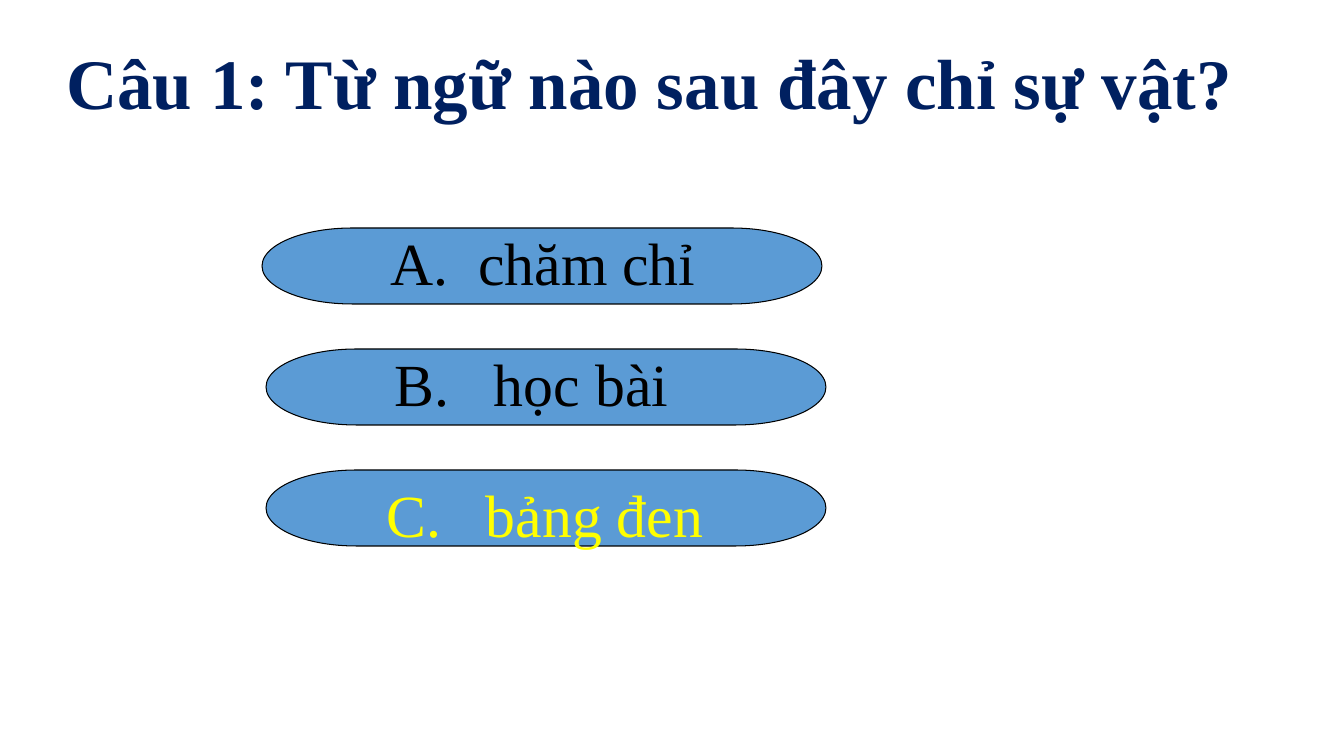
from pptx import Presentation
from pptx.dml.color import RGBColor
from pptx.enum.shapes import MSO_SHAPE
from pptx.enum.text import MSO_ANCHOR, MSO_AUTO_SIZE, PP_ALIGN
from pptx.util import Pt

PILL = MSO_SHAPE.FLOWCHART_TERMINATOR
LEFT, CENTER = PP_ALIGN.LEFT, PP_ALIGN.CENTER
PX = 914400 / 100.8
COLORS = {"navy": "002060", "blue": "5B9BD5", "black": "000000", "yellow": "FFFF00"}

TITLE = "Câu 1: Từ ngữ nào sau đây chỉ sự vật?"
TITLE_BOX = (56, 33, 1243, 96)
# text, colour, pill left, label left, label top, label width
ANSWERS = [
    ("A.  chăm chỉ", "black", 262, 319, 221, 448),
    ("B.   học bài", "black", 266, 296, 342, 471),
    ("C.   bảng đen", "yellow", 266, 319, 473, 452),
]
PILL_TOP, PILL_STEP, PILL_W, PILL_H = 228, 121, 560, 76
LABEL_H = 83


def emu(*lengths):
    return [round(n * PX) for n in lengths]


def rgb(name):
    return RGBColor.from_string(COLORS[name])


def write(shape, text, align, size, color, bold=False):
    frame = shape.text_frame
    for key, value in {"word_wrap": True, "auto_size": MSO_AUTO_SIZE.NONE,
                       "vertical_anchor": MSO_ANCHOR.TOP}.items():
        setattr(frame, key, value)
    para = frame.paragraphs[0]
    para.alignment, para.space_before = align, Pt(5)
    run = para.add_run()
    run.text = text
    for key, value in {"name": "Times New Roman", "size": Pt(size), "bold": bold}.items():
        setattr(run.font, key, value)
    run.font.color.rgb = rgb(color)


def add_pill(slide, left, top):
    pill = slide.shapes.add_shape(PILL, *emu(left, top, PILL_W, PILL_H))
    pill.shadow.inherit = False
    pill.fill.solid()
    pill.fill.fore_color.rgb = rgb("blue")
    pill.line.color.rgb = rgb("black")
    pill.line.width = Pt(0.75)


def main():
    deck = Presentation()
    deck.slide_width, deck.slide_height = emu(1344, 756)
    slide = deck.slides.add_slide(deck.slide_layouts[5])
    title = slide.shapes.title
    title.left, title.top, title.width, title.height = emu(*TITLE_BOX)
    write(title, TITLE, LEFT, 50.7, "navy", bold=True)

    for row, (text, color, pill_x, x, y, width) in enumerate(ANSWERS):
        add_pill(slide, pill_x, PILL_TOP + row * PILL_STEP)
        label = slide.shapes.add_textbox(*emu(x, y, width, LABEL_H))
        write(label, text, CENTER, 42.7, color)
    deck.save("out.pptx")


if __name__ == "__main__":
    main()
